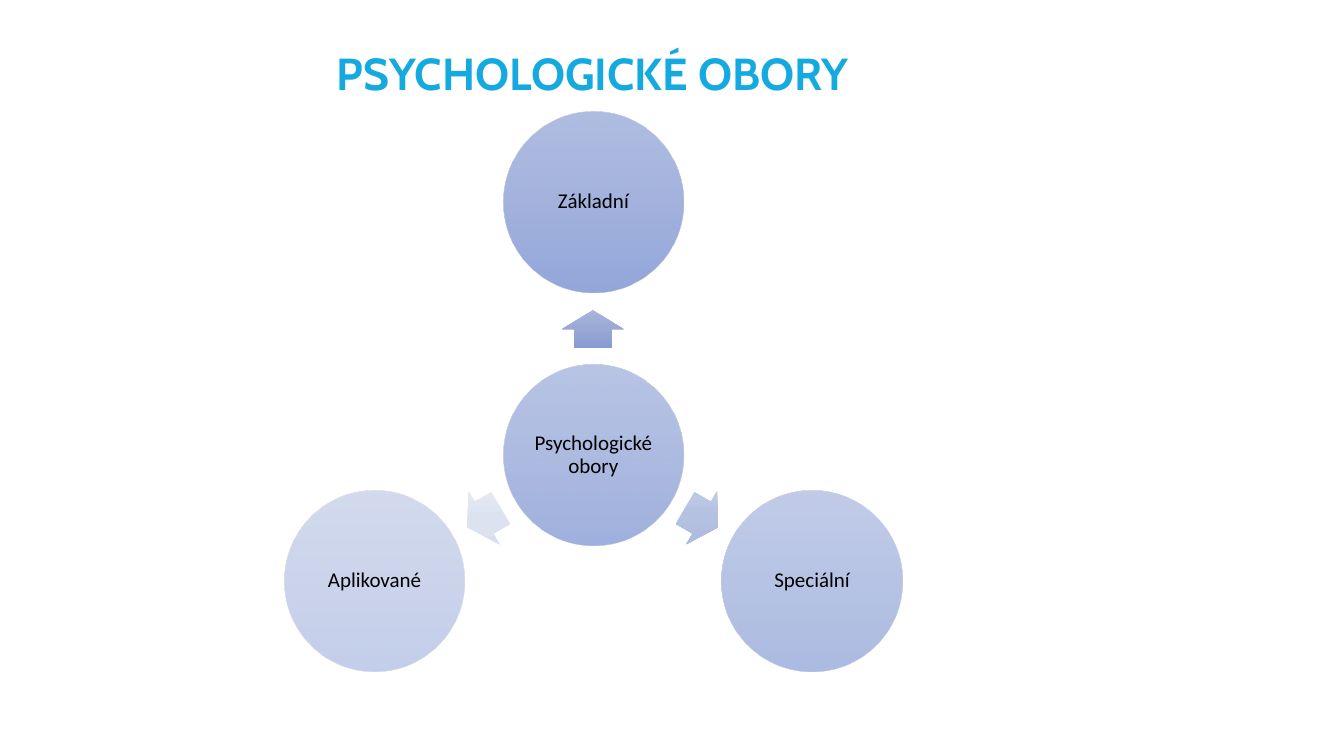
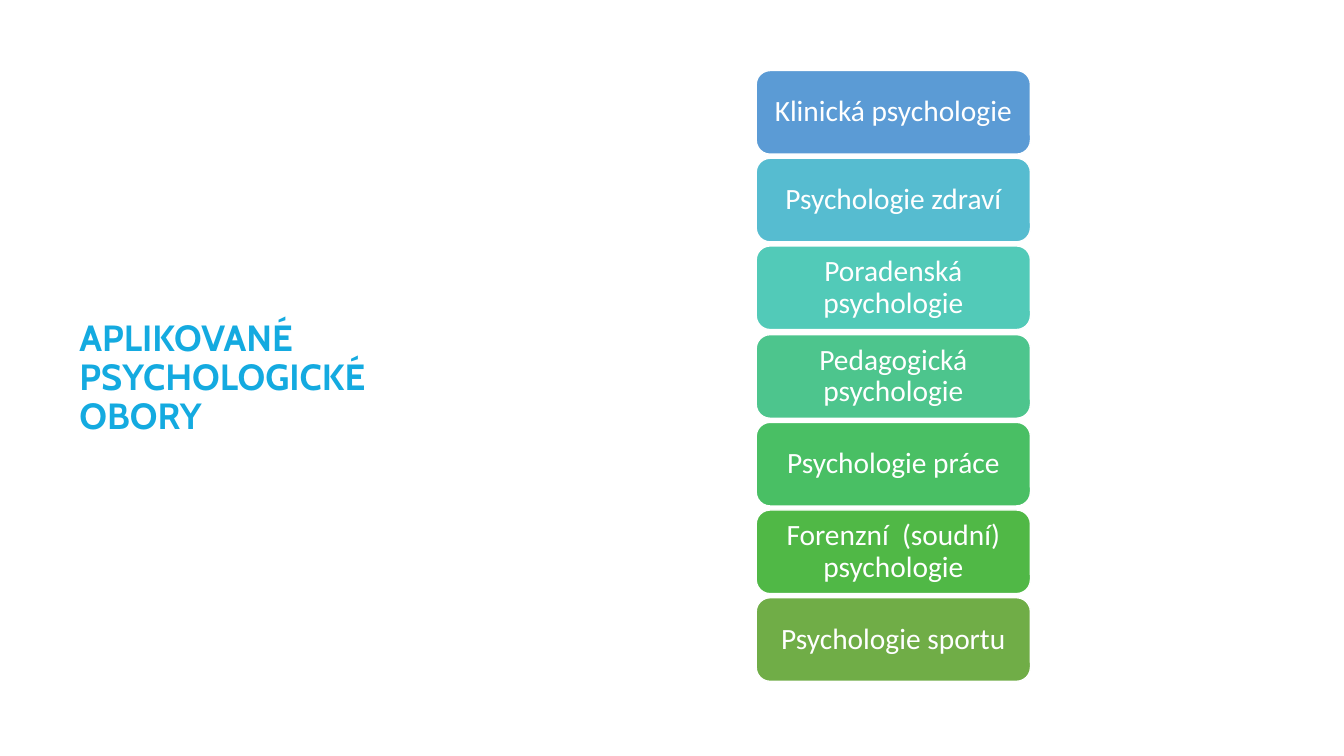
import dataclasses
import math
from typing import Any, Optional

import pptx
import pptx.dml.color
import pptx.enum.shapes
import pptx.enum.text
import pptx.oxml
import pptx.oxml.ns
import pptx.util

EMU_PER_PX = 9144
SHAPE = pptx.enum.shapes.MSO_SHAPE
ALIGN = pptx.enum.text.PP_ALIGN
ANCHOR = pptx.enum.text.MSO_ANCHOR


@dataclasses.dataclass(frozen=True)
class Theme:
    title_color: str = "14AAE0"
    dark_text: str = "000000"
    light_text: str = "FFFFFF"
    outline: str = "FFFFFF"
    circle_gradient: tuple[str, ...] = ("A8B7DF", "9AABD9", "889ED7")
    title_font: str = "Cabin"
    body_font: str = "Calibri"
    diagram_title_size: int = 32
    list_title_size: int = 26
    circle_size: int = 15
    box_size: int = 21
    line_spacing: float = 0.9


@dataclasses.dataclass(frozen=True)
class Box:
    left: int
    top: int
    width: int
    height: int

    def emu(self) -> list[int]:
        return [px(value) for value in dataclasses.astuple(self)]


@dataclasses.dataclass(frozen=True)
class TextStyle:
    font: str
    size: int
    color: str
    bold: bool = False
    align: Any = ALIGN.CENTER
    margin_x: int = 10
    margin_y: int = 5


@dataclasses.dataclass(frozen=True)
class Branch:
    label: str
    angle: int
    opacity: int
    arrow_gradient: tuple[str, ...]


@dataclasses.dataclass(frozen=True)
class Field:
    label: str
    color: str


THEME = Theme()
DIAGRAM_TITLE = TextStyle(THEME.title_font, THEME.diagram_title_size, THEME.title_color, True)
LIST_TITLE = TextStyle(
    THEME.title_font, THEME.list_title_size, THEME.title_color, True, ALIGN.LEFT
)
CIRCLE_TEXT = TextStyle(
    THEME.body_font, THEME.circle_size, THEME.dark_text, margin_x=2, margin_y=2
)
BOX_TEXT = TextStyle(THEME.body_font, THEME.box_size, THEME.light_text, margin_x=9, margin_y=4)

HUB_X, HUB_Y = 588, 451
CIRCLE_DIAMETER = 179
BRANCH_DISTANCE = 251
ARROW_DISTANCE = 125
ARROW_LENGTH, ARROW_BREADTH = 38, 61

BRANCHES = [
    Branch("Základní", 270, 90, ("A7B5DB", "99A9D5", "869BD2")),
    Branch("Speciální", 30, 70, ("C2CDE7", "B5C1E1", "AAB8DF")),
    Branch("Aplikované", 150, 50, ("E9ECF6", "DDE2F1", "D9DEF0")),
]

FIRST_BOX = Box(750, 70, 272, 83)
LAST_BOX_TOP = 593
FIELDS = [
    Field("Klinická psychologie", "5B9BD5"),
    Field("Psychologie zdraví", "56BCD0"),
    Field("Poradenská psychologie", "52CAB8"),
    Field("Pedagogická psychologie", "4DC58D"),
    Field("Psychologie práce", "49BF64"),
    Field("Forenzní  (soudní) psychologie", "50B846"),
    Field("Psychologie sportu", "70AD47"),
]


def px(value: int) -> int:
    return pptx.util.Emu(value * EMU_PER_PX)


def rgb(value: str) -> pptx.dml.color.RGBColor:
    return pptx.dml.color.RGBColor.from_string(value)


def apply_format(target: Any, values: dict[str, Any]) -> None:
    for name, value in values.items():
        setattr(target, name, value)


def write_text(shape: Any, text: str, style: TextStyle) -> None:
    frame = shape.text_frame
    paragraph = frame.paragraphs[0]
    paragraph.text = text
    apply_format(frame, {
        "word_wrap": True,
        "vertical_anchor": ANCHOR.MIDDLE,
        "margin_left": px(style.margin_x),
        "margin_right": px(style.margin_x),
        "margin_top": px(style.margin_y),
        "margin_bottom": px(style.margin_y),
    })
    apply_format(paragraph, {"alignment": style.align, "line_spacing": THEME.line_spacing})
    font = paragraph.runs[0].font
    apply_format(font, {
        "name": style.font,
        "size": pptx.util.Pt(style.size),
        "bold": style.bold,
    })
    font.color.rgb = rgb(style.color)


def add_title(slide: Any, text: str, box: Box, style: TextStyle) -> None:
    write_text(slide.shapes.add_textbox(*box.emu()), text, style)


def add_plain_shape(slide: Any, kind: Any, box: Box) -> Any:
    shape = slide.shapes.add_shape(kind, *box.emu())
    shape.shadow.inherit = False
    shape.line.fill.background()
    return shape


def fill_gradient(shape: Any, colors: tuple[str, ...], opacity: int = 100) -> None:
    step = 100000 // (len(colors) - 1)
    stops = "".join(
        f'<a:gs pos="{index * step}"><a:srgbClr val="{color}">'
        f'<a:alpha val="{opacity * 1000}"/></a:srgbClr></a:gs>'
        for index, color in enumerate(colors)
    )
    gradient = pptx.oxml.parse_xml(
        f'<a:gradFill {pptx.oxml.ns.nsdecls("a")} rotWithShape="0">'
        f'<a:gsLst>{stops}</a:gsLst><a:lin ang="5400000" scaled="0"/></a:gradFill>'
    )
    shape.fill.gradient()
    properties = shape._element.spPr
    properties.replace(properties.find(pptx.oxml.ns.qn("a:gradFill")), gradient)


def box_around_hub(angle: int, distance: int, width: int, height: int) -> Box:
    radians = math.radians(angle)
    center_x = HUB_X + round(distance * math.cos(radians))
    center_y = HUB_Y + round(distance * math.sin(radians))
    return Box(center_x - width // 2, center_y - height // 2, width, height)


def add_circle(slide: Any, label: str, opacity: int, angle: int = 0, distance: int = 0) -> None:
    box = box_around_hub(angle, distance, CIRCLE_DIAMETER, CIRCLE_DIAMETER)
    circle = add_plain_shape(slide, SHAPE.OVAL, box)
    fill_gradient(circle, THEME.circle_gradient, opacity)
    write_text(circle, label, CIRCLE_TEXT)


def add_branch(slide: Any, branch: Branch) -> None:
    box = box_around_hub(branch.angle, ARROW_DISTANCE, ARROW_LENGTH, ARROW_BREADTH)
    arrow = add_plain_shape(slide, SHAPE.RIGHT_ARROW, box)
    arrow.rotation = branch.angle
    arrow.adjustments[0] = 0.6
    arrow.adjustments[1] = 0.5
    fill_gradient(arrow, branch.arrow_gradient)
    add_circle(slide, branch.label, branch.opacity, branch.angle, BRANCH_DISTANCE)


def add_field(slide: Any, field: Field, top: int) -> None:
    shape = add_plain_shape(
        slide, SHAPE.ROUNDED_RECTANGLE, dataclasses.replace(FIRST_BOX, top=top)
    )
    shape.fill.solid()
    shape.fill.fore_color.rgb = rgb(field.color)
    shape.line.color.rgb = rgb(THEME.outline)
    shape.line.width = pptx.util.Pt(1)
    write_text(shape, field.label, BOX_TEXT)


def build_diagram_slide(slide: Any) -> None:
    add_title(slide, "PSYCHOLOGICKÉ OBORY", Box(35, 40, 1106, 71), DIAGRAM_TITLE)
    add_circle(slide, "Psychologické obory", 80)
    for branch in BRANCHES:
        add_branch(slide, branch)


def build_list_slide(slide: Any) -> None:
    add_title(slide, "APLIKOVANÉ PSYCHOLOGICKÉ OBORY", Box(69, 70, 374, 611), LIST_TITLE)
    pitch = (LAST_BOX_TOP - FIRST_BOX.top) / (len(FIELDS) - 1)
    for index, field in enumerate(FIELDS):
        add_field(slide, field, FIRST_BOX.top + round(index * pitch))


def main() -> None:
    presentation = pptx.Presentation()
    apply_format(presentation, {"slide_width": px(1333), "slide_height": px(750)})
    blank_layout = presentation.slide_layouts[6]
    for build in (build_diagram_slide, build_list_slide):
        build(presentation.slides.add_slide(blank_layout))
    presentation.save("out.pptx")


if __name__ == "__main__":
    main()
